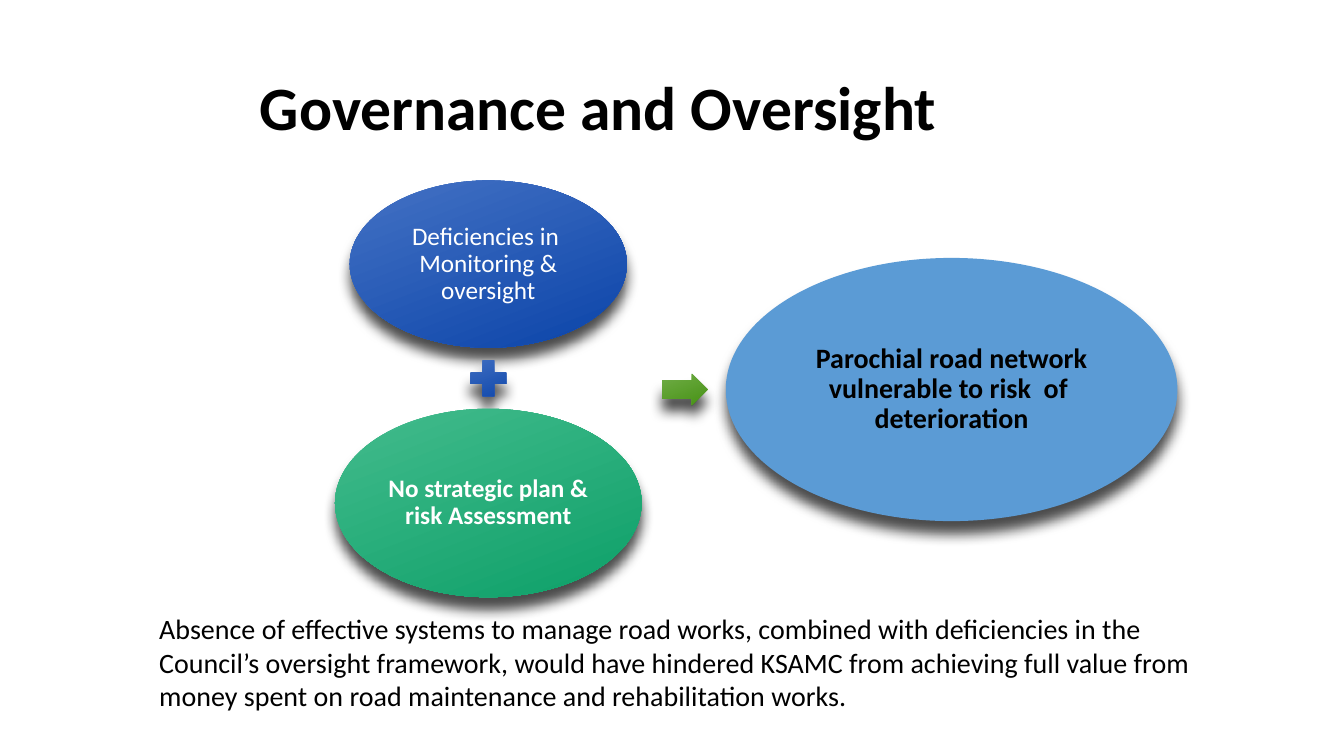
from dataclasses import dataclass

from lxml import etree
from pptx import Presentation
from pptx.dml.color import RGBColor
from pptx.enum.shapes import MSO_SHAPE
from pptx.enum.text import MSO_ANCHOR, PP_ALIGN
from pptx.oxml.ns import qn
from pptx.util import Pt

OVAL, PLUS, ARROW = MSO_SHAPE.OVAL, MSO_SHAPE.MATH_PLUS, MSO_SHAPE.RIGHT_ARROW
LEFT, CENTER = PP_ALIGN.LEFT, PP_ALIGN.CENTER
TOP, MIDDLE = MSO_ANCHOR.TOP, MSO_ANCHOR.MIDDLE


@dataclass(frozen=True)
class Theme:
    font: str = "Calibri"
    black: str = "000000"
    white: str = "FFFFFF"
    blue: tuple = ("4472C4", "0B44A9")
    teal: tuple = ("43BB8D", "0DA068")
    green: tuple = ("70AD47", "479215")
    sky: tuple = ("5B9BD5",)
    title: int = 44
    body: int = 20
    label: int = 18


THEME = Theme()


def write(frame, text, size=THEME.body, color=THEME.black, bold=False,
          align=LEFT, anchor=TOP, space=1.0, inset=None):
    frame.word_wrap = True
    frame.vertical_anchor = anchor
    if inset is not None:
        frame.margin_left = frame.margin_right = Pt(inset)
        frame.margin_top = frame.margin_bottom = Pt(inset)
    para = frame.paragraphs[0]
    para.text = text
    para.alignment = align
    para.line_spacing = space
    font = para.font
    font.name, font.size, font.bold = THEME.font, Pt(size), bold
    font.color.rgb = RGBColor.from_string(color)


def add_text(slide, box, text, **style):
    write(slide.shapes.add_textbox(*map(Pt, box)).text_frame, text, **style)


def paint(shape, colors):
    """One colour gives a solid fill, two give a gradient."""
    fill = shape.fill
    if len(colors) == 1:
        fill.solid()
        fill.fore_color.rgb = RGBColor.from_string(colors[0])
        return
    fill.gradient()
    fill.gradient_angle = 360 - 69
    for stop, color in zip(fill.gradient_stops, colors):
        stop.color.rgb = RGBColor.from_string(color)


def add_shadow(shape):
    shape.shadow.inherit = False
    effects = shape._element.spPr.find(qn("a:effectLst"))
    outer = etree.SubElement(
        effects, qn("a:outerShdw"), blurRad=str(Pt(9)), dist=str(Pt(9)),
        dir=str(90 * 60000), algn="ctr", rotWithShape="0")
    color = etree.SubElement(outer, qn("a:srgbClr"), val=THEME.black)
    etree.SubElement(color, qn("a:alpha"), val="70000")


def add_form(slide, kind, mid, area, colors, text=None, **style):
    """Place a shape by its centre."""
    left, top = (m - a / 2 for m, a in zip(mid, area))
    shape = slide.shapes.add_shape(kind, *map(Pt, (left, top, *area)))
    paint(shape, colors)
    shape.line.fill.background()
    add_shadow(shape)
    if text:
        write(shape.text_frame, text, align=CENTER, anchor=MIDDLE,
              space=0.9, inset=2, **style)
    return shape


def main():
    deck = Presentation()
    deck.slide_width, deck.slide_height = Pt(960), Pt(540)
    slide = deck.slides.add_slide(deck.slide_layouts[6])

    # Heading and summary
    add_text(slide, (178.6, 45.4, 715.7, 67.7), "Governance and Oversight",
             size=THEME.title, bold=True, anchor=MIDDLE, space=0.9)
    add_text(slide, (106.6, 433.4, 771.8, 80),
             "Absence of effective systems to manage road works, combined with "
             "deficiencies in the Council’s oversight framework, would have "
             "hindered KSAMC from achieving full value from money spent on "
             "road maintenance and rehabilitation works.")

    # Causes, stacked with equal gaps
    label = {"size": THEME.label, "color": THEME.white}
    causes = [
        (OVAL, (198, 119.5), THEME.blue,
         "Deficiencies in  Monitoring & oversight", label),
        (PLUS, (34.6, 34.6), THEME.blue, None, {}),
        (OVAL, (219, 134.6), THEME.teal,
         "No strategic plan & risk Assessment", {**label, "bold": True}),
    ]
    axis, top, gap = 348.8, 128.9, 4.5
    for kind, area, colors, text, style in causes:
        add_form(slide, kind, (axis, top + area[1] / 2), area, colors,
                 text, **style)
        top += area[1] + gap

    # Arrow and result, on one level
    level = 278.25
    arrow = add_form(slide, ARROW, (489.2, level), (32.4, 22.4), THEME.green)
    arrow.adjustments[0], arrow.adjustments[1] = 0.6, 0.5
    add_form(slide, OVAL, (679.7, level), (322.6, 188), THEME.sky,
             "Parochial road network vulnerable to risk  of  deterioration",
             bold=True)

    deck.save("out.pptx")


if __name__ == "__main__":
    main()
